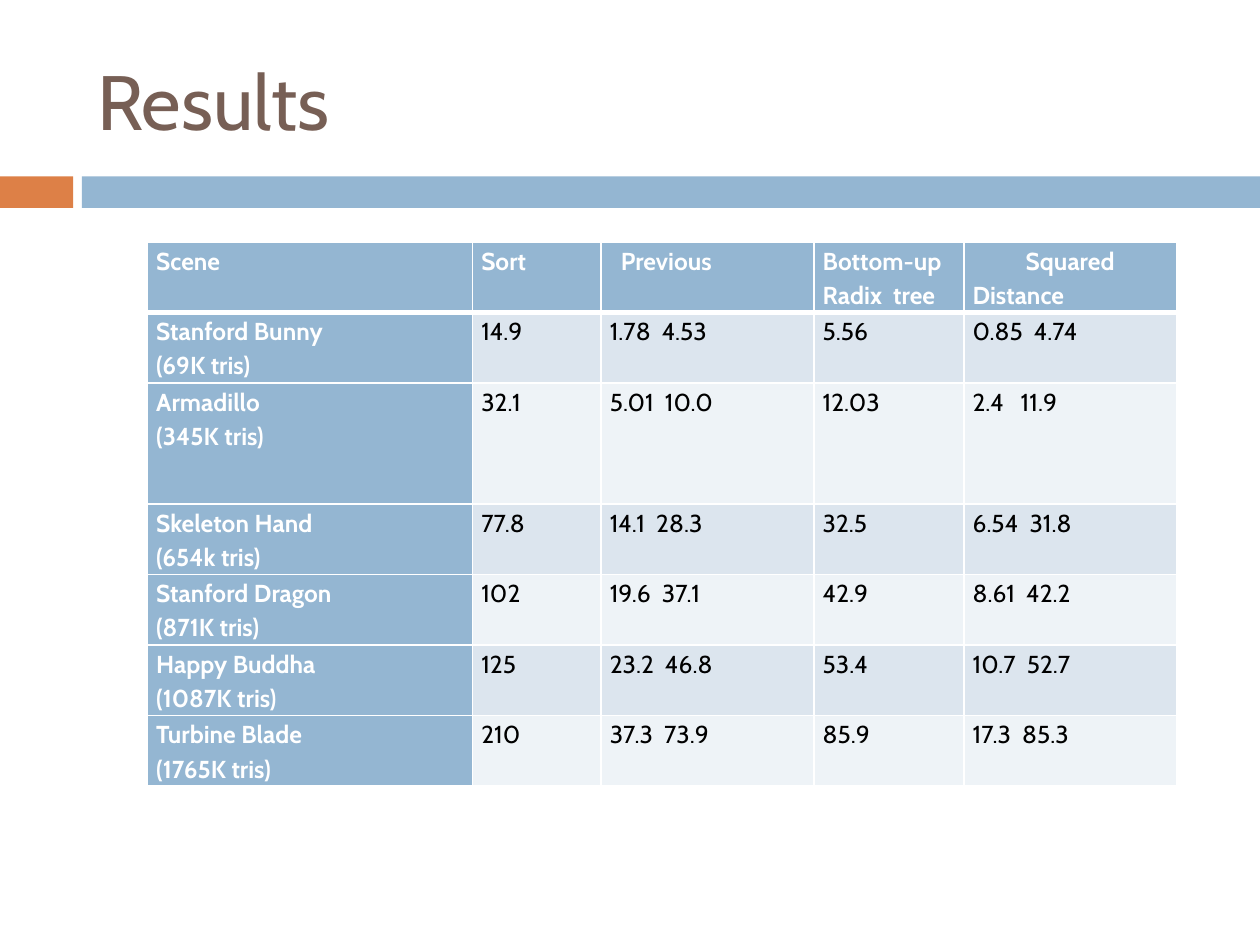
from lxml.etree import SubElement
from pptx import Presentation
from pptx.dml.color import RGBColor
from pptx.enum.shapes import MSO_SHAPE as Shape
from pptx.enum.text import MSO_ANCHOR as Anchor, PP_ALIGN as Align
from pptx.oxml.ns import qn
from pptx.util import Inches, Pt

FONT = "Cabin"
BLUE, ORANGE, BROWN = "94B6D2", "DD8047", "775F55"
WHITE, BLACK = "FFFFFF", "000000"
BANDS = ["DCE5EE", "EEF3F7"]

HEADINGS = ["Scene", "Sort", "  Previous", "Bottom-up Radix  tree",
            "  Squared   Distance"]
RESULTS = [
    ["Stanford Bunny\n(69K tris)", "14.9", "1.78  4.53", "5.56", "0.85  4.74"],
    ["Armadillo\n(345K tris)", "32.1", "5.01  10.0", "12.03", "2.4   11.9"],
    ["Skeleton Hand\n(654k tris)", "77.8", "14.1  28.3", "32.5", "6.54  31.8"],
    ["Stanford Dragon\n(871K tris)", "102", "19.6  37.1", "42.9", "8.61  42.2"],
    ["Happy Buddha\n(1087K tris)", "125", "23.2  46.8", "53.4", "10.7  52.7"],
    ["Turbine Blade\n(1765K tris)", "210", "37.3  73.9", "85.9", "17.3  85.3"],
]
COLUMN_WIDTHS = [2.58, 1.02, 1.69, 1.19, 1.69]
ROW_HEIGHTS = [0.56, 0.56, 0.96, 0.56, 0.56, 0.56, 0.56]


def rgb(hex_color):
    return RGBColor.from_string(hex_color)


def style_paragraph(paragraph, size, color, bold=False, align=Align.LEFT):
    paragraph.alignment = align
    font = paragraph.font
    font.name, font.size, font.bold = FONT, Pt(size), bold
    font.color.rgb = rgb(color)


def place_title(slide, text, left, top, width, height):
    title = slide.shapes.title
    title.left, title.top = Inches(left), Inches(top)
    title.width, title.height = Inches(width), Inches(height)
    title.text_frame.text = text
    title.text_frame.vertical_anchor = Anchor.MIDDLE
    style_paragraph(title.text_frame.paragraphs[0], 44, BROWN)


def add_divider(slide, left, top, width, height):
    """Short orange bar and long blue bar, parted by a narrow gap."""
    accent, gap = 0.58, 0.07
    blue_start = accent + gap
    for offset, length, color in [(0, accent, ORANGE),
                                  (blue_start, width - blue_start, BLUE)]:
        bar = slide.shapes.add_shape(Shape.RECTANGLE, Inches(left + offset),
                                     Inches(top), Inches(length), Inches(height))
        bar.shadow.inherit = False
        bar.fill.solid()
        bar.fill.fore_color.rgb = rgb(color)
        bar.line.fill.background()


def set_borders(cell, top, bottom):
    """White borders: 1 pt at the sides, given points above and below."""
    properties = cell._tc.get_or_add_tcPr()
    sides = [("a:lnL", 1), ("a:lnR", 1), ("a:lnT", top), ("a:lnB", bottom)]
    for position, (tag, points) in enumerate(sides):
        line = SubElement(properties, qn(tag), w=str(Pt(points)))
        SubElement(SubElement(line, qn("a:solidFill")), qn("a:srgbClr"), val=WHITE)
        properties.insert(position, line)


def fill_cell(cell, text, row, column):
    is_heading = row == 0 or column == 0
    cell.margin_left = cell.margin_right = Inches(0.07)
    cell.margin_top = cell.margin_bottom = 0
    cell.fill.solid()
    cell.fill.fore_color.rgb = rgb(BLUE if is_heading else BANDS[(row - 1) % 2])
    set_borders(cell, top=3 if row == 1 else 1, bottom=3 if row == 0 else 1)
    cell.text = text
    for paragraph in cell.text_frame.paragraphs:
        style_paragraph(paragraph, 14, WHITE if is_heading else BLACK,
                        is_heading, Align.JUSTIFY)
        paragraph.line_spacing = 1.15


def add_results_table(slide, left, top):
    rows = [HEADINGS] + RESULTS
    table = slide.shapes.add_table(
        len(rows), len(HEADINGS), Inches(left), Inches(top),
        Inches(sum(COLUMN_WIDTHS)), Inches(sum(ROW_HEIGHTS))).table
    table.first_col = True
    for column, width in zip(table.columns, COLUMN_WIDTHS):
        column.width = Inches(width)
    for row, height in zip(table.rows, ROW_HEIGHTS):
        row.height = Inches(height)
    for r, texts in enumerate(rows):
        for c, text in enumerate(texts):
            fill_cell(table.cell(r, c), text, r, c)


def main():
    deck = Presentation()
    deck.slide_width, deck.slide_height = Inches(10), Inches(7.5)
    slide = deck.slides.add_slide(deck.slide_layouts[5])
    add_divider(slide, 0, 1.4, 10, 0.25)
    place_title(slide, "Results", 0.67, 0.25, 8.92, 1.08)
    add_results_table(slide, 1.17, 1.92)
    deck.save("out.pptx")


if __name__ == "__main__":
    main()
